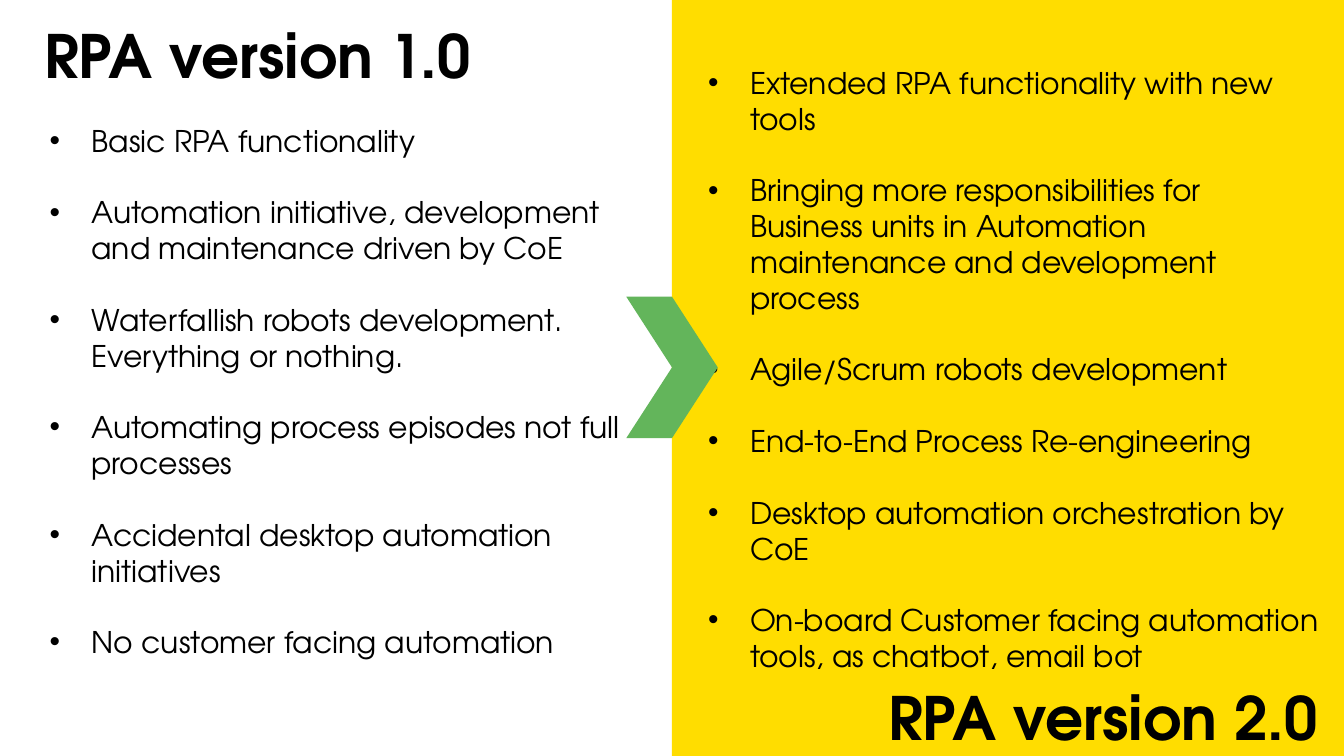
from dataclasses import dataclass

from lxml.etree import SubElement
from pptx import Presentation
from pptx.dml.color import RGBColor as Color
from pptx.enum.shapes import MSO_SHAPE as Kind
from pptx.oxml.ns import qn
from pptx.slide import Slide
from pptx.util import Pt

FACE = "TeX Gyre Adventor"
HEAD = {"size": Pt(32), "bold": True, "name": FACE}
BODY = {"size": Pt(16), "name": FACE}


@dataclass
class Box:
    left: float
    top: float
    width: float
    height: float

    def spot(self) -> list[Pt]:
        return [Pt(n) for n in (self.left, self.top, self.width, self.height)]


@dataclass
class Block:
    box: Box
    lines: list[str]
    style: dict
    bullet: bool = False
    pitch: float = 1.0


@dataclass
class Form:
    kind: Kind
    box: Box
    fill: str


PANEL = Form(Kind.RECTANGLE, Box(360, 0, 360, 405), "FFDD00")
ARROW = Form(Kind.CHEVRON, Box(335.5, 159, 49, 75.75), "63B55B")

BLOCKS = [
    Block(Box(19.5, 62, 342.75, 317.5), [
        "Basic RPA functionality",
        "Automation initiative, development and maintenance driven by CoE",
        "Waterfallish robots development. Everything or nothing.",
        "Automating process episodes not full processes",
        "Accidental desktop automation initiatives",
        "No customer facing automation",
    ], BODY, bullet=True),
    Block(Box(16.5, 10.75, 680.5, 104.5), ["RPA version 1.0"], HEAD, pitch=0.9),
    Block(Box(468.75, 365.75, 251.25, 39.25), ["RPA version 2.0"], HEAD, pitch=0.9),
    Block(Box(372.25, 31, 342.75, 356.5), [
        "Extended RPA functionality with new tools",
        "Bringing more responsibilities for Business units in Automation "
        "maintenance and development process",
        "Agile/Scrum robots development",
        "End-to-End Process Re-engineering",
        "Desktop automation orchestration by CoE",
        "On-board Customer facing automation tools, as chatbot, email bot",
    ], BODY, bullet=True),
]


def paint(item, code: str) -> None:
    item.solid()
    item.fore_color.rgb = Color.from_string(code)


def draw(slide: Slide, form: Form) -> None:
    shape = slide.shapes.add_shape(form.kind, *form.box.spot())
    shape.shadow.inherit = False
    paint(shape.fill, form.fill)
    shape.line.fill.background()


def write(slide: Slide, block: Block) -> None:
    frame = slide.shapes.add_textbox(*block.box.spot()).text_frame
    frame.word_wrap = True
    for i, line in enumerate(block.lines):
        para = frame.paragraphs[0] if i == 0 else frame.add_paragraph()
        para.line_spacing = block.pitch
        if i:
            para.space_before = Pt(19.2)
        if block.bullet:
            props = para._p.get_or_add_pPr()
            props.set("marL", str(Pt(22.5)))
            props.set("indent", str(-Pt(22.5)))
            SubElement(props, qn("a:buFont"), typeface="Arial")
            SubElement(props, qn("a:buChar"), char="•")
        run = para.add_run()
        run.text = line
        for key, value in block.style.items():
            setattr(run.font, key, value)
        paint(run.font.fill, "000000")


def main() -> None:
    """Build the slide that compares two versions of RPA."""
    deck = Presentation()
    deck.slide_width, deck.slide_height = Pt(720), Pt(405)
    slide = deck.slides.add_slide(deck.slide_layouts[6])
    paint(slide.background.fill, "FFFFFF")
    draw(slide, PANEL)
    for block in BLOCKS:
        write(slide, block)
    draw(slide, ARROW)
    deck.save("out.pptx")


if __name__ == "__main__":
    main()
